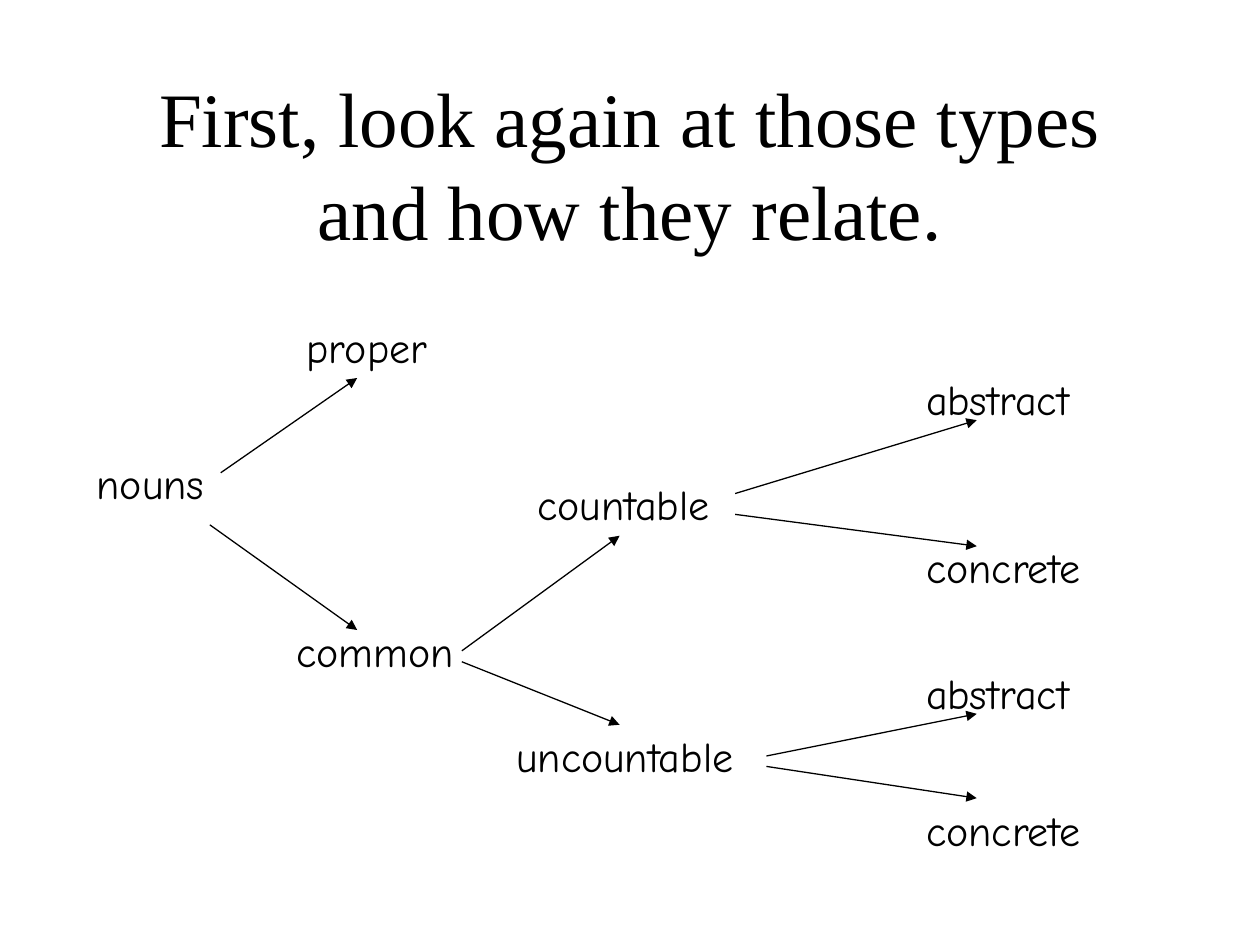
from dataclasses import dataclass

import pptx
import pptx.dml.color
import pptx.enum.dml
import pptx.enum.shapes
import pptx.enum.text
import pptx.oxml
import pptx.oxml.ns
import pptx.util
from pptx.util import Cm


@dataclass(frozen=True)
class Theme:
    ink: pptx.dml.color.RGBColor = pptx.dml.color.RGBColor(0, 0, 0)
    title_font: str = "Times New Roman"
    label_font: str = "Comic Neue"
    title_size: int = 44
    label_size: int = 24
    line_width: float = 0.75


THEME = Theme()
LABEL_HEIGHT = 1.27
LEAF_LEFT = 18.42
ARROW_END = 19.69

# Word, left, top, width in centimetres
LABELS = [
    ("nouns", 1.7, 9.1, 2.96),
    ("proper", 5.93, 6.35, 3.18),
    ("common", 5.72, 12.49, 4.02),
    ("countable", 10.58, 9.53, 4.45),
    ("uncountable", 10.16, 14.61, 5.29),
    ("abstract", LEAF_LEFT, 7.41, 4.02),
    ("concrete", LEAF_LEFT, 10.8, 4.23),
    ("abstract", LEAF_LEFT, 13.34, 4.02),
    ("concrete", LEAF_LEFT, 16.09, 4.02),
]

# Start x, start y, end x, end y in centimetres
ARROWS = [
    (4.23, 10.58, 7.2, 12.7),  # nouns to common
    (4.45, 9.53, 7.2, 7.62),  # nouns to proper
    (9.31, 13.12, 12.49, 10.8),  # common to countable
    (9.31, 13.34, 12.49, 14.61),  # common to uncountable
    (14.82, 9.95, ARROW_END, 8.47),  # countable to abstract
    (14.82, 10.37, ARROW_END, 11.01),  # countable to concrete
    (15.45, 15.24, ARROW_END, 14.39),  # uncountable to abstract
    (15.45, 15.45, ARROW_END, 16.09),  # uncountable to concrete
]


def write_text(box, text, font_name, size, align):
    frame = box.text_frame
    frame.text = text
    frame.word_wrap = True
    para = frame.paragraphs[0]
    para.alignment = align
    para.font.name = font_name
    para.font.size = pptx.util.Pt(size)
    para.font.color.rgb = THEME.ink
    return frame


def set_title(page, text):
    title = page.shapes.title
    title.left, title.top = Cm(1.9), Cm(1.7)
    title.width, title.height = Cm(21.6), Cm(3.18)
    frame = write_text(title, text, THEME.title_font, THEME.title_size,
                       pptx.enum.text.PP_ALIGN.CENTER)
    frame.auto_size = pptx.enum.text.MSO_AUTO_SIZE.NONE
    frame.vertical_anchor = pptx.enum.text.MSO_ANCHOR.MIDDLE


def add_label(page, word, left, top, width):
    box = page.shapes.add_textbox(Cm(left), Cm(top), Cm(width), Cm(LABEL_HEIGHT))
    frame = write_text(box, word, THEME.label_font, THEME.label_size,
                       pptx.enum.text.PP_ALIGN.LEFT)
    frame.auto_size = pptx.enum.text.MSO_AUTO_SIZE.SHAPE_TO_FIT_TEXT


def add_arrow(page, *ends):
    arrow = page.shapes.add_connector(
        pptx.enum.shapes.MSO_CONNECTOR.STRAIGHT, *map(Cm, ends))
    arrow.line.color.rgb = THEME.ink
    arrow.line.width = pptx.util.Pt(THEME.line_width)
    # Arrowhead and no shadow
    head = pptx.oxml.parse_xml(
        f'<a:tailEnd {pptx.oxml.ns.nsdecls("a")} type="triangle"/>')
    arrow.line._get_or_add_ln().append(head)
    no_effect = pptx.oxml.parse_xml(
        f'<a:effectLst {pptx.oxml.ns.nsdecls("a")}/>')
    arrow._element.spPr.append(no_effect)


def main():
    deck = pptx.Presentation()
    deck.slide_width, deck.slide_height = Cm(25.4), Cm(19.05)
    page = deck.slides.add_slide(deck.slide_layouts[5])

    # Heading
    set_title(page, "First, look again at those types and how they relate.")

    # Tree of noun types
    for label in LABELS:
        add_label(page, *label)
    for ends in ARROWS:
        add_arrow(page, *ends)

    deck.save("out.pptx")


if __name__ == "__main__":
    main()
